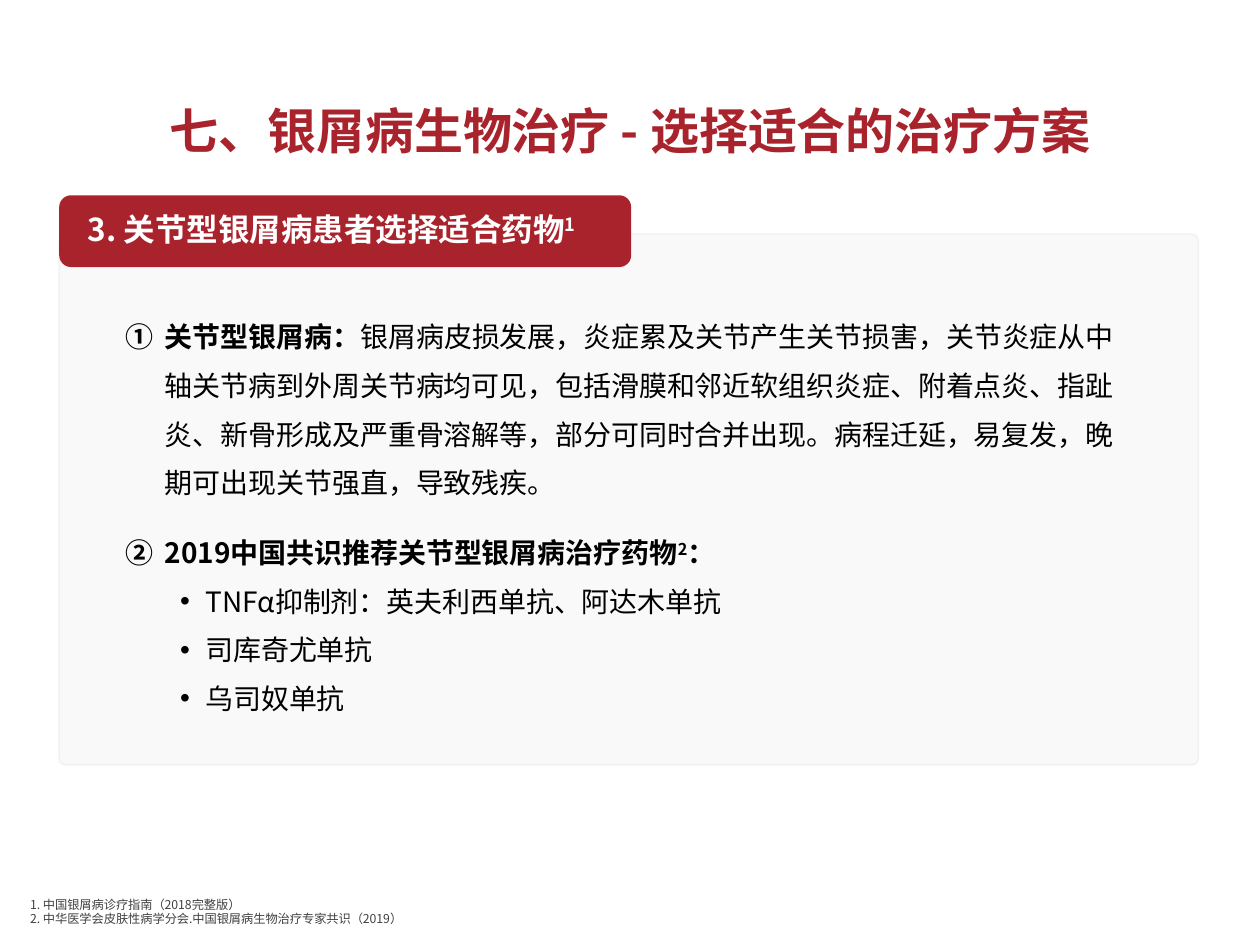
from lxml.etree import SubElement
from pptx import Presentation
from pptx.dml.color import RGBColor
from pptx.enum.shapes import MSO_SHAPE
from pptx.enum.text import MSO_ANCHOR, PP_ALIGN
from pptx.oxml.ns import qn
from pptx.util import Inches, Pt

FONT = "Noto Sans CJK SC"
RED = RGBColor(0xA9, 0x23, 0x2D)
WHITE = RGBColor(0xFF, 0xFF, 0xFF)
BLACK = RGBColor(0, 0, 0)
GRAY = RGBColor(0x40, 0x40, 0x40)
PANEL_FILL = RGBColor(0xF9, 0xF9, 0xF9)
PANEL_LINE = RGBColor(0xF2, 0xF2, 0xF2)

# Runs are (text, style); style is any of "b" (bold) and "^" (superscript).
TITLE = [("七、银屑病生物治疗 - 选择适合的治疗方案", "b")]
HEADING = [("3. 关节型银屑病患者选择适合药物", "b"), ("1", "b^")]
POINTS = [
    ("number", 0, [
        ("关节型银屑病：", "b"),
        ("银屑病皮损发展，炎症累及关节产生关节损害，关节炎症从中轴关节病到外周关节病均可见，"
         "包括滑膜和邻近软组织炎症、附着点炎、指趾炎、新骨形成及严重骨溶解等，"
         "部分可同时合并出现。病程迁延，易复发，晚期可出现关节强直，导致残疾。", "")]),
    ("number", 12, [("2019中国共识推荐关节型银屑病治疗药物", "b"), ("2", "b^"), ("：", "b")]),
    ("dot", 0, [("TNFα抑制剂：英夫利西单抗、阿达木单抗", "")]),
    ("dot", 0, [("司库奇尤单抗", "")]),
    ("dot", 0, [("乌司奴单抗", "")]),
]
REFERENCES = [
    "1. 中国银屑病诊疗指南（2018完整版）",
    "2. 中华医学会皮肤性病学分会.中国银屑病生物治疗专家共识（2019）",
]
# kind: (level, left margin, hanging indent, bullet tag, bullet attributes)
BULLETS = {
    "number": (0, 0.31, 0.31, "a:buAutoNum", {"type": "circleNumDbPlain"}),
    "dot": (1, 0.63, 0.2, "a:buChar", {"char": "•"}),
}


def add_runs(paragraph, runs, size, color):
    for text, style in runs:
        run = paragraph.add_run()
        run.text = text
        font = run.font
        font.name, font.size, font.bold = FONT, Pt(size), "b" in style
        font.color.rgb = color
        properties = font._element
        SubElement(properties, qn("a:ea")).set("typeface", FONT)
        if "^" in style:
            properties.set("baseline", "30000")


def hang(paragraph, margin, indent):
    properties = paragraph._p.get_or_add_pPr()
    properties.set("marL", str(Inches(margin)))
    properties.set("indent", str(-Inches(indent)))
    return properties


def add_box(slide, left, top, width, height, anchor):
    box = slide.shapes.add_textbox(*map(Inches, (left, top, width, height)))
    frame = box.text_frame
    frame.word_wrap = True
    frame.vertical_anchor = anchor
    return frame


def add_rounded(slide, left, top, width, height, fill):
    shape = slide.shapes.add_shape(
        MSO_SHAPE.ROUNDED_RECTANGLE, *map(Inches, (left, top, width, height)))
    shape.shadow.inherit = False
    shape.fill.solid()
    shape.fill.fore_color.rgb = fill
    return shape


def set_insets(frame, left, top, right, bottom):
    frame.margin_left, frame.margin_top = Inches(left), Inches(top)
    frame.margin_right, frame.margin_bottom = Inches(right), Inches(bottom)


def paragraphs(frame, count):
    return [frame.paragraphs[0]] + [frame.add_paragraph() for _ in range(count - 1)]


def main():
    prs = Presentation()
    prs.slide_width, prs.slide_height = Inches(10), Inches(7.5)
    slide = prs.slides.add_slide(prs.slide_layouts[6])

    panel = add_rounded(slide, 0.47, 1.86, 9.04, 4.21, PANEL_FILL)
    panel.adjustments[0] = 0.012
    panel.line.color.rgb = PANEL_LINE
    panel.line.width = Pt(1)

    title = add_box(slide, 0.69, 0.68, 8.62, 0.76, MSO_ANCHOR.MIDDLE).paragraphs[0]
    title.alignment = PP_ALIGN.CENTER
    title.line_spacing = 0.9
    add_runs(title, TITLE, 28, RED)

    notes = add_box(slide, 0.14, 6.9, 9.38, 0.5, MSO_ANCHOR.BOTTOM)
    for paragraph, reference in zip(paragraphs(notes, len(REFERENCES)), REFERENCES):
        hang(paragraph, 0.25, 0.25)
        add_runs(paragraph, [(reference, "")], 7, GRAY)

    body = add_box(slide, 1, 2.42, 8, 3.45, MSO_ANCHOR.TOP)
    set_insets(body, 0, 0, 0, 0)
    for paragraph, (kind, before, runs) in zip(paragraphs(body, len(POINTS)), POINTS):
        level, margin, indent, tag, attributes = BULLETS[kind]
        paragraph.level = level
        paragraph.line_spacing = 1.45
        paragraph.space_before = Pt(before)
        properties = hang(paragraph, margin, indent)
        if kind == "dot":
            SubElement(properties, qn("a:buFont")).set("typeface", "Arial")
        SubElement(properties, qn(tag), attributes)
        add_runs(paragraph, runs, 16, BLACK)

    banner = add_rounded(slide, 0.47, 1.55, 4.54, 0.57, RED)
    banner.line.fill.background()
    frame = banner.text_frame
    frame.word_wrap = True
    frame.vertical_anchor = MSO_ANCHOR.MIDDLE
    set_insets(frame, 0.2, 0.05, 0.1, 0.05)
    heading = frame.paragraphs[0]
    heading.alignment = PP_ALIGN.LEFT
    heading.line_spacing = 0.9
    add_runs(heading, HEADING, 18, WHITE)

    prs.save("out.pptx")


if __name__ == "__main__":
    main()
